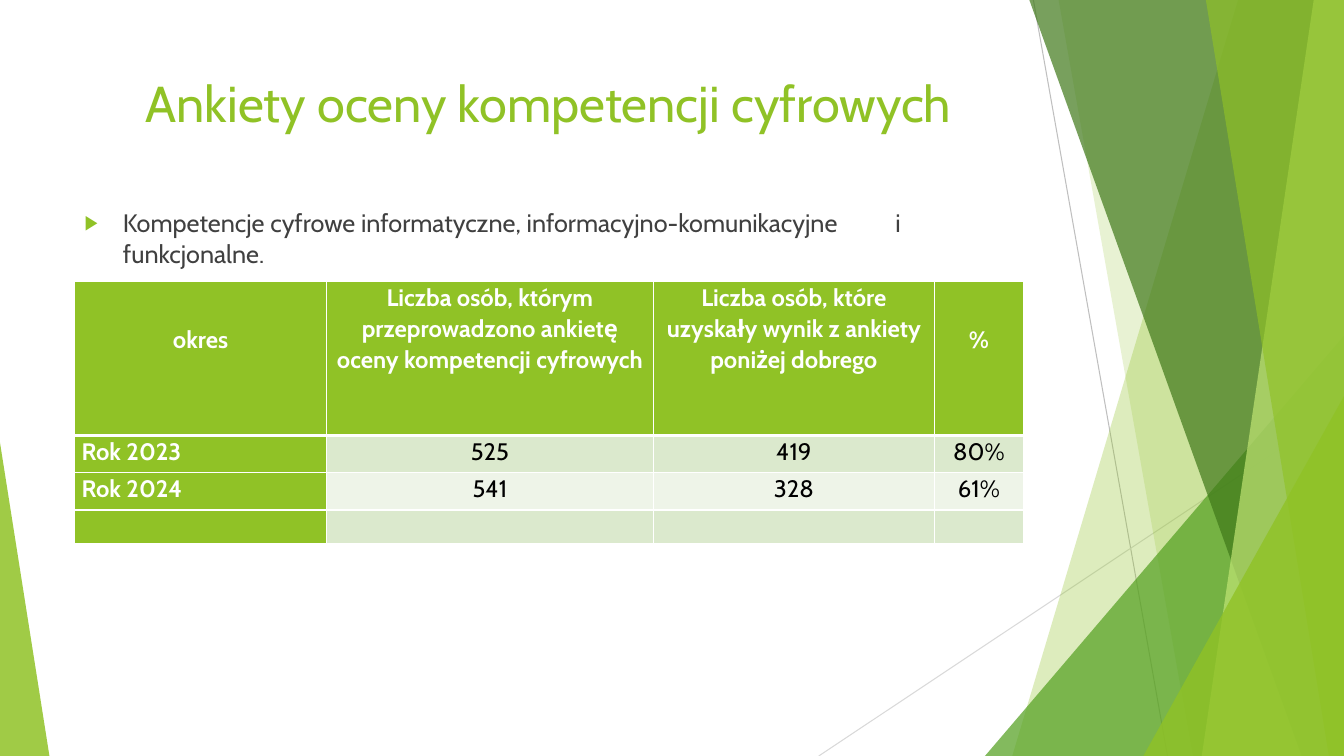
from lxml.etree import SubElement
from pptx import Presentation
from pptx.dml.color import RGBColor
from pptx.enum.shapes import MSO_CONNECTOR, MSO_SHAPE
from pptx.enum.text import MSO_ANCHOR, MSO_AUTO_SIZE, PP_ALIGN
from pptx.oxml.ns import qn
from pptx.util import Inches, Pt

INK = {
    "lime": "90C226", "leaf": "54A021", "moss": "3F7819", "pale": "C0E474",
    "gray": "BFBFBF", "mist": "D9D9D9", "text": "404040", "black": "000000",
    "white": "FFFFFF", "band": "DBE9CD", "light": "EEF4E8",
}
FONT = "Cabin"

deck = Presentation()
deck.slide_width, deck.slide_height = Inches(13.33), Inches(7.5)
WIDE, HIGH = deck.slide_width / 100, deck.slide_height / 100
slide = deck.slides.add_slide(deck.slide_layouts[1])
shapes = slide.shapes


def paint(shape, ink, alpha):
    """Fill a shape with a see-through colour, without line or shadow."""
    shape.fill.solid()
    shape.fill.fore_color.rgb = RGBColor.from_string(INK[ink])
    color = shape.element.spPr.find(qn("a:solidFill"))[0]
    SubElement(color, qn("a:alpha"), val=str(alpha * 1000))
    shape.line.fill.background()
    shape.shadow.inherit = False


def write(para, text, size, ink, bold=False):
    run = para.add_run()
    run.text = text
    run.font.name, run.font.size, run.font.bold = FONT, Pt(size), bold
    run.font.color.rgb = RGBColor.from_string(INK[ink])


# Thin lines: start, end, colour; places are percent of the slide
for x1, y1, x2, y2, ink in [(76.89, 0, 86.87, 100, "gray"),
                            (100, 53.73, 60.92, 100, "mist")]:
    line = shapes.add_connector(
        MSO_CONNECTOR.STRAIGHT, round(x1 * WIDE), round(y1 * HIGH),
        round(x2 * WIDE), round(y2 * HIGH))
    line.line.color.rgb = RGBColor.from_string(INK[ink])
    line.line.width = Pt(0.75)
    SubElement(line.element.spPr, qn("a:effectLst"))

# Shards run to the right edge: top x, foot x.
# Wedges stand on the bottom: left, top, width, peak.
decor = [
    ("shard", (92.12, 75.32), "lime", 30),
    ("shard", (78.77, 88.75), "lime", 20),
    ("wedge", (73.29, 44.4, 26.71, 1), "leaf", 72),
    ("shard", (76.59, 96.85), "moss", 70),
    ("shard", (97.75, 89.42), "pale", 70),
    ("shard", (89.72, 98.87), "lime", 65),
    ("wedge", (85.07, 52.4, 14.93, 1), "lime", 80),
    ("wedge", (0, 58.53, 3.68, 0), "lime", 85),
]
for kind, place, ink, alpha in decor:
    if kind == "shard":
        top, foot = place
        pen = shapes.build_freeform(round(top * WIDE), 0)
        pen.add_line_segments([(round(x * WIDE), round(y * HIGH)) for x, y in
                               [(100, 0), (100, 100), (foot, 100)]])
        shape = pen.convert_to_shape()
    else:
        left, top, width, peak = place
        shape = shapes.add_shape(
            MSO_SHAPE.ISOSCELES_TRIANGLE, round(left * WIDE),
            round(top * HIGH), round(width * WIDE), round((100 - top) * HIGH))
        shape.adjustments[0] = peak
    paint(shape, ink, alpha)

# Title and list
LEFT, SPAN = round(5.55 * WIDE), round(70.52 * WIDE)
title, body = shapes.title, slide.placeholders[1]
for holder, top, height in [(title, 8.93, 19.2), (body, 26.8, 61.33)]:
    holder.left, holder.top = LEFT, round(top * HIGH)
    holder.width, holder.height = SPAN, round(height * HIGH)
    frame = holder.text_frame
    frame.word_wrap = True
    frame.auto_size = MSO_AUTO_SIZE.NONE
    frame.vertical_anchor = MSO_ANCHOR.TOP
    holder.element.getparent().append(holder.element)

head = title.text_frame.paragraphs[0]
head.alignment = PP_ALIGN.CENTER
write(head, "Ankiety oceny kompetencji cyfrowych", 36, "lime")

item = body.text_frame.paragraphs[0]
item.space_before = Pt(10)
write(item, "Kompetencje cyfrowe informatyczne, informacyjno-komunikacyjne\t"
      "i funkcjonalne.", 18, "text")
props = item._p.get_or_add_pPr()
props.set("marL", str(Inches(0.38)))
props.set("indent", str(-Inches(0.38)))
SubElement(SubElement(props, qn("a:buClr")), qn("a:srgbClr"), val=INK["lime"])
SubElement(props, qn("a:buSzPct"), val="80000")
SubElement(props, qn("a:buChar"), char="▶")
SubElement(SubElement(props, qn("a:tabLst")), qn("a:tab"),
           pos=str(Inches(8.04)), algn="l")

# Table
COLS = [18.75, 24.31, 20.93, 6.6]
ROWS = [20.4, 4.93, 4.93, 4.4]
DATA = [
    ["okres",
     "Liczba osób, którym przeprowadzono ankietę oceny kompetencji cyfrowych",
     "Liczba osób, które uzyskały wynik z ankiety poniżej dobrego", "%"],
    ["Rok 2023", "525", "419", "80%"],
    ["Rok 2024", "541", "328", "61%"],
    ["", "", "", ""],
]
table = shapes.add_table(len(ROWS), len(COLS), LEFT, round(37.2 * HIGH),
                         SPAN, round(sum(ROWS) * HIGH)).table
for col, share in zip(table.columns, COLS):
    col.width = round(share * WIDE)
for row, share in zip(table.rows, ROWS):
    row.height = round(share * HIGH)

for r, texts in enumerate(DATA):
    for c, text in enumerate(texts):
        cell = table.cell(r, c)
        bold = r == 0 or c == 0
        cell.margin_left = cell.margin_right = Inches(0.07)
        cell.margin_top = cell.margin_bottom = 0
        if r == 0 and c in (0, 3):
            cell.margin_top = Inches(0.42)
        cell.vertical_anchor = MSO_ANCHOR.TOP
        for side in ("lnL", "lnR", "lnT", "lnB"):
            thick = (r, side) in [(0, "lnB"), (1, "lnT")]
            edge = SubElement(cell._tc.get_or_add_tcPr(), qn("a:" + side),
                              w=str(Pt(3 if thick else 1)))
            SubElement(SubElement(edge, qn("a:solidFill")),
                       qn("a:srgbClr"), val=INK["white"])
        cell.fill.solid()
        tone = "lime" if bold else "band" if r % 2 else "light"
        cell.fill.fore_color.rgb = RGBColor.from_string(INK[tone])
        para = cell.text_frame.paragraphs[0]
        para.alignment = PP_ALIGN.JUSTIFY if r and not c else PP_ALIGN.CENTER
        para.line_spacing = 1.07
        if text:
            write(para, text, 17, "white" if bold else "black", bold)

deck.save("out.pptx")
